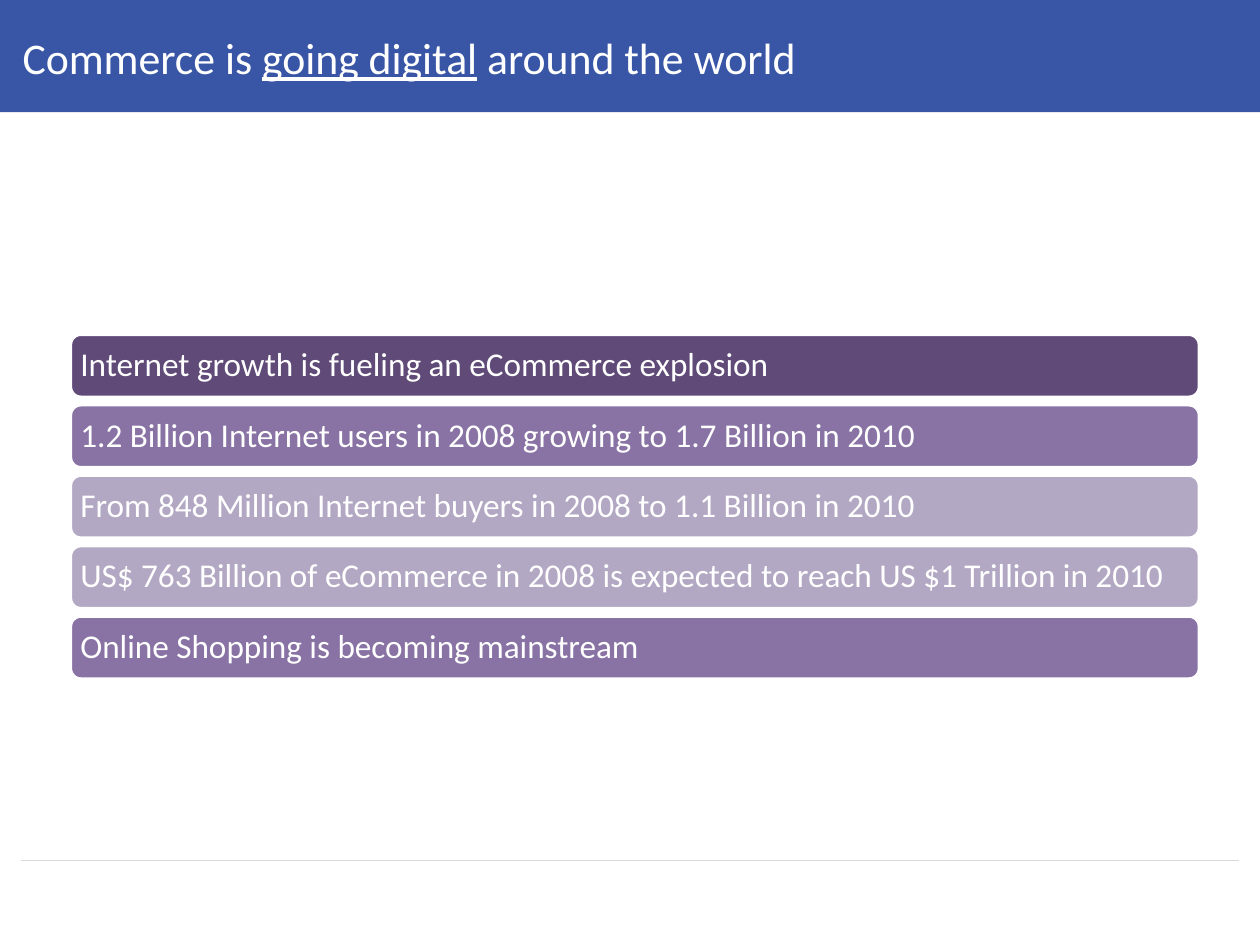
from lxml import etree
from pptx import Presentation
from pptx.dml.color import RGBColor
from pptx.enum.shapes import MSO_CONNECTOR, MSO_SHAPE
from pptx.enum.text import MSO_ANCHOR, MSO_AUTO_SIZE, PP_ALIGN
from pptx.oxml.ns import qn
from pptx.util import Cm, Pt

RECT, ROUND = MSO_SHAPE.RECTANGLE, MSO_SHAPE.ROUNDED_RECTANGLE
LINE = MSO_CONNECTOR.STRAIGHT
MID, LEFT, FIXED = MSO_ANCHOR.MIDDLE, PP_ALIGN.LEFT, MSO_AUTO_SIZE.NONE

FONT, WHITE, BLUE, GREY = "Calibri", "FFFFFF", "3956A6", "D9D9D9"
DARK, PLUM, PALE = "5F4A78", "8873A4", "B3A8C3"

TITLE = [("Commerce is ", False), ("going digital", True),
         (" around the world", False)]
BARS = [
    ("Internet growth is fueling an eCommerce explosion", DARK),
    ("1.2 Billion Internet users in 2008 growing to 1.7 Billion in 2010", PLUM),
    ("From 848 Million Internet buyers in 2008 to 1.1 Billion in 2010", PALE),
    ("US$ 763 Billion of eCommerce in 2008 is expected to reach US $1 Trillion in 2010", PALE),
    ("Online Shopping is becoming mainstream", PLUM),
]
WIDE, HIGH = 25.4, 19.05
BAR_X, BAR_Y, BAR_W, BAR_H, STEP = 1.42, 6.74, 22.76, 1.27, 1.42
RULE_X, RULE_Y = 0.43, 17.35


def paint(part, color):
    part.solid()
    part.fore_color.rgb = RGBColor.from_string(color)


def add_box(kind, x, y, w, h, color):
    box = slide.shapes.add_shape(kind, Cm(x), Cm(y), Cm(w), Cm(h))
    box.shadow.inherit = False
    paint(box.fill, color)
    return box


def add_text(frame, runs, size):
    frame.word_wrap = True
    frame.auto_size = FIXED
    frame.vertical_anchor = MID
    para = frame.paragraphs[0]
    para.alignment = LEFT
    for text, under in runs:
        run = para.add_run()
        run.text = text
        font = run.font
        font.name, font.size, font.underline = FONT, Pt(size), under
        paint(font.fill, WHITE)
    return para


deck = Presentation()
deck.slide_width, deck.slide_height = Cm(WIDE), Cm(HIGH)
slide = deck.slides.add_slide(deck.slide_layouts[5])

band = add_box(RECT, 0, 0, WIDE, 2.26, BLUE)
band.line.fill.background()

title = slide.shapes.title
title.left, title.top, title.width, title.height = Cm(0.2), Cm(0.2), Cm(22.86), Cm(1.9)
add_text(title.text_frame, TITLE, 25)
band._element.addnext(title._element)

rule = slide.shapes.add_connector(
    LINE, Cm(RULE_X), Cm(RULE_Y), Cm(WIDE - RULE_X), Cm(RULE_Y))
paint(rule.line.fill, GREY)
rule.line.width = Pt(0.75)
etree.SubElement(rule._element.spPr, qn("a:effectLst"))

for i, (text, color) in enumerate(BARS):
    bar = add_box(ROUND, BAR_X, BAR_Y + i * STEP, BAR_W, BAR_H, color)
    paint(bar.line.fill, WHITE)
    bar.line.width = Pt(2)
    frame = bar.text_frame
    frame.margin_left = frame.margin_right = Cm(0.14)
    frame.margin_top = frame.margin_bottom = Cm(0.14)
    para = add_text(frame, [(text, False)], 19)
    para.line_spacing = 0.9

deck.save("out.pptx")
